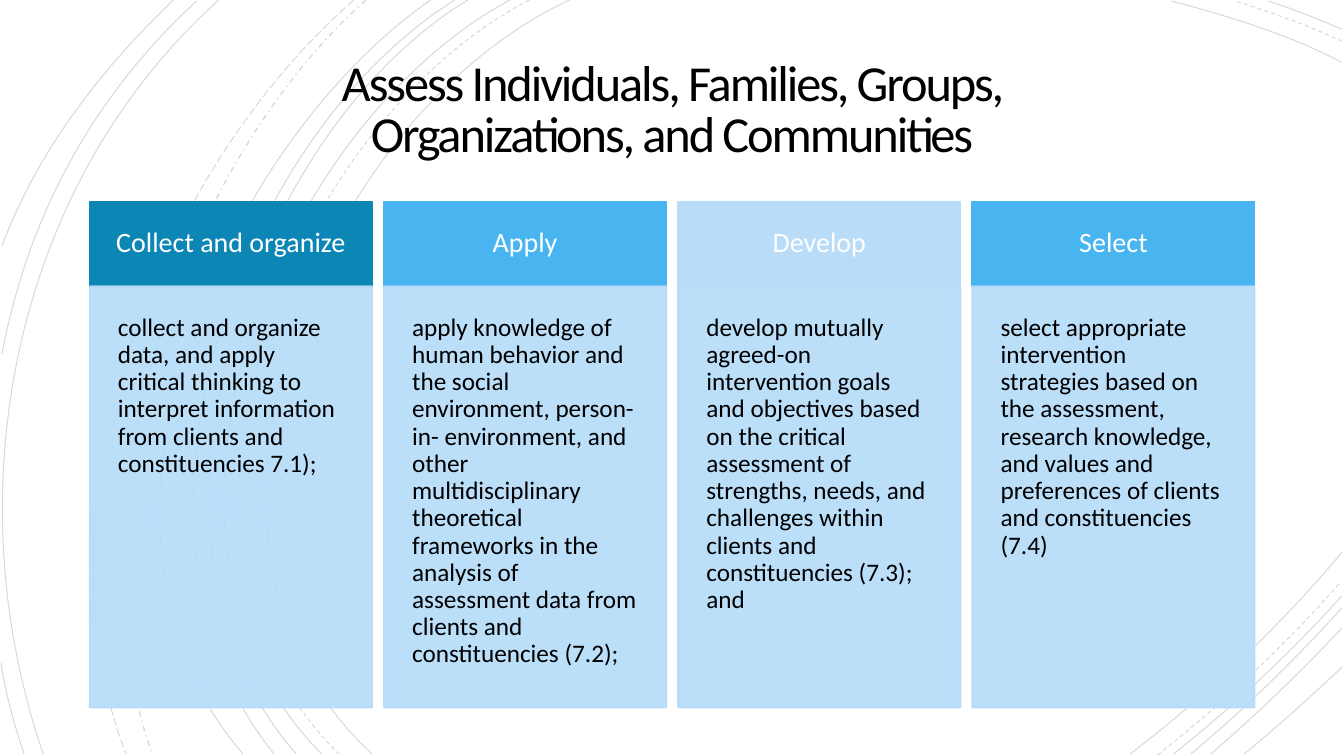
from dataclasses import dataclass

from pptx import Presentation
from pptx import util as u
from pptx.dml.color import RGBColor
from pptx.enum import dml, shapes, text
from pptx.oxml.xmlchemy import OxmlElement

TITLE = "Assess Individuals, Families, Groups, Organizations, and Communities"

# Heading, heading colour, body
CARDS = [
    ("Collect and organize", "0C87B5",
     "collect and organize data, and apply critical thinking to interpret "
     "information from clients and constituencies 7.1);"),
    ("Apply", "49B5F0",
     "apply knowledge of human behavior and the social environment, "
     "person-in- environment, and other multidisciplinary theoretical "
     "frameworks in the analysis of assessment data from clients and "
     "constituencies (7.2);"),
    ("Develop", "B9DDF8",
     "develop mutually agreed-on intervention goals and objectives based on "
     "the critical assessment of strengths, needs, and challenges within "
     "clients and constituencies (7.3); and"),
    ("Select", "49B5F0",
     "select appropriate intervention strategies based on the assessment, "
     "research knowledge, and values and preferences of clients and "
     "constituencies (7.4)"),
]

# Start, two control points and end of each arc, in px, by dash style
ARCS = {
    "SOLID": [
        ((565, 0), (315, 115), (143, 540), (369, 748)),
        ((1331, 62), (1278, 34), (1218, 16), (1162, 1)),
        ((1121, 748), (1197, 690), (1269, 622), (1331, 548)),
        ((506, 0), (270, 127), (110, 537), (319, 748)),
        ((1331, 29), (1307, 19), (1283, 9), (1258, 1)),
        ((1164, 748), (1223, 701), (1280, 648), (1331, 591)),
        ((464, 0), (244, 133), (110, 541), (294, 748)),
        ((1181, 748), (1234, 704), (1284, 655), (1331, 603)),
        ((451, 0), (231, 138), (97, 533), (272, 748)),
        ((1201, 748), (1246, 709), (1290, 667), (1331, 623)),
        ((427, 0), (217, 147), (53, 529), (241, 748)),
        ((1234, 748), (1267, 721), (1299, 692), (1331, 662)),
        ((217, 0), (11, 185), (-46, 490), (43, 748)),
        ((195, 1), (92, 96), (28, 214), (2, 351)),
        ((1, 658), (6, 689), (14, 719), (24, 748)),
        ((172, 0), (100, 69), (37, 150), (2, 244)),
    ],
    "DASH": [
        ((525, 0), (285, 125), (123, 537), (336, 748)),
        ((1331, 41), (1297, 25), (1260, 12), (1225, 1)),
        ((1148, 749), (1213, 698), (1275, 640), (1330, 577)),
    ],
    "DASH_DOT": [((363, 0), (176, 166), (65, 509), (151, 748))],
    "LONG_DASH": [((351, 0), (157, 169), (29, 499), (125, 748))],
}


@dataclass(frozen=True)
class Theme:
    font: str = "Calibri"
    ink: str = "000000"
    pale: str = "FFFFFF"
    panel: str = "B4DBF9"
    title: int = 36
    head: int = 20
    body: int = 18


T = Theme()
SCALE = 9144  # EMU in one px, 100 px to the inch
LEFT, TOP, STEP, WIDE = 89, 200, 291.8, 280
HEAD, BODY = 84, 418


def px(n):
    return u.Emu(round(n * SCALE))


def fade(item, pct):
    """Set the opacity of every colour in a shape's fill and line."""
    for tint in item.element.spPr.xpath(".//a:srgbClr"):
        alpha = OxmlElement("a:alpha")
        alpha.set("val", str(pct * 1000))
        tint.append(alpha)


def write(item, words, size, color, inset, align, anchor, lead):
    frame = item.text_frame
    frame.word_wrap = True
    frame.auto_size = text.MSO_AUTO_SIZE.NONE
    frame.vertical_anchor = anchor
    frame.margin_left = frame.margin_right = px(inset)
    frame.margin_top = frame.margin_bottom = px(inset)
    para = frame.paragraphs[0]
    para.alignment, para.line_spacing = align, lead
    run = para.add_run()
    run.text = words
    run.font.name, run.font.size = T.font, u.Pt(size)
    run.font.color.rgb = RGBColor.from_string(color)
    return run


def arc(slide, points, dash):
    """Draw one cubic curve, using the four points as its Bezier handles."""
    pen = slide.shapes.build_freeform(*points[0], scale=SCALE)
    pen.add_line_segments(points[1:], close=False)
    item = pen.convert_to_shape()
    curve = OxmlElement("a:cubicBezTo")
    for leg in item.element.xpath(".//a:lnTo"):
        curve.append(leg[0])
        last = leg.getparent()
        last.remove(leg)
    last.append(curve)
    item.shadow.inherit = False
    item.fill.background()
    item.line.color.rgb = RGBColor.from_string(T.ink)
    item.line.width = u.Pt(1 if dash == "DASH_DOT" else 0.75)
    item.line.dash_style = dml.MSO_LINE[dash]
    fade(item, 15)


def box(slide, x, y, h, color):
    item = slide.shapes.add_shape(
        shapes.MSO_SHAPE.RECTANGLE, px(x), px(y), px(WIDE), px(h))
    item.shadow.inherit = False
    item.fill.solid()
    item.fill.fore_color.rgb = RGBColor.from_string(color)
    item.line.color.rgb = RGBColor.from_string(color)
    item.line.width = u.Pt(1.25)
    return item


def main():
    deck = Presentation()
    deck.slide_width, deck.slide_height = px(1333), px(750)
    slide = deck.slides.add_slide(deck.slide_layouts[5])
    mid, left = text.PP_ALIGN.CENTER, text.PP_ALIGN.LEFT
    top, center = text.MSO_ANCHOR.TOP, text.MSO_ANCHOR.MIDDLE

    for dash, group in ARCS.items():
        for points in group:
            arc(slide, points, dash)

    title = slide.shapes.title
    title.left, title.top = px(192), px(19)
    title.width, title.height = px(949), px(183)
    run = write(title, TITLE, T.title, T.ink, 25, mid, center, 0.85)
    run.font._element.set("spc", "-150")

    for i, (name, color, words) in enumerate(CARDS):
        x = LEFT + i * STEP
        head = box(slide, x, TOP, HEAD, color)
        write(head, name, T.head, T.pale, 22, mid, center, 0.9)
        body = box(slide, x, TOP + HEAD, BODY, T.panel)
        fade(body, 90)
        write(body, words, T.body, T.ink, 28, left, top, 0.9)

    deck.save("out.pptx")


if __name__ == "__main__":
    main()
